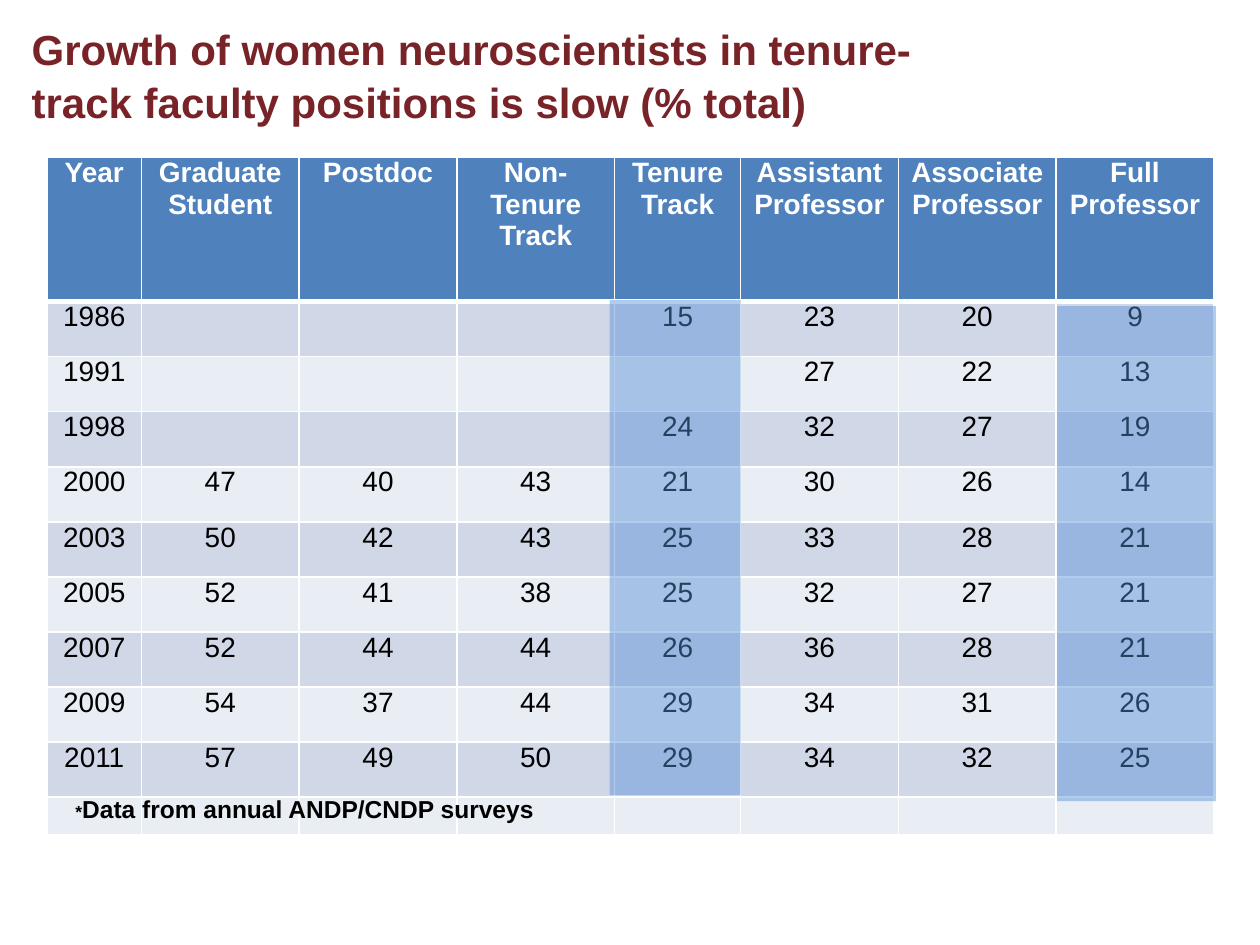
from dataclasses import dataclass

import pptx
import pptx.dml.color
import pptx.enum.shapes
import pptx.enum.text
import pptx.oxml
import pptx.oxml.ns
import pptx.util
from pptx.util import Cm

FONT = "Arial"
HEADERS = ["Year", "Graduate Student", "Postdoc", "Non-\nTenure\nTrack", "Tenure\nTrack",
           "Assistant Professor", "Associate Professor", "Full Professor"]
ROWS = [
    ["1986", "", "", "", "15", "23", "20", "9"],
    ["1991", "", "", "", "", "27", "22", "13"],
    ["1998", "", "", "", "24", "32", "27", "19"],
    ["2000", "47", "40", "43", "21", "30", "26", "14"],
    ["2003", "50", "42", "43", "25", "33", "28", "21"],
    ["2005", "52", "41", "38", "25", "32", "27", "21"],
    ["2007", "52", "44", "44", "26", "36", "28", "21"],
    ["2009", "54", "37", "44", "29", "34", "31", "26"],
    ["2011", "57", "49", "50", "29", "34", "32", "25"],
    [""] * 8,
]
COL_WIDTHS = [1.9, 3.18, 3.18, 3.18, 2.54, 3.18, 3.18, 3.18]
ROW_HEIGHTS = [2.9] + [1.11] * 9 + [0.7]


@dataclass
class Box:
    left: float
    top: float
    width: float
    height: float

    def cm(self) -> list:
        return [Cm(v) for v in (self.left, self.top, self.width, self.height)]


HIGHLIGHTS = [Box(12.29, 6.05, 2.64, 9.98), Box(21.31, 6.17, 3.2, 9.98)]


def rgb(color: str):
    return pptx.dml.color.RGBColor.from_string(color)


def add_text(p, text: str, size: float = 16, color: str = "000000", bold: bool = False) -> None:
    r = p.add_run()
    r.text = text
    r.font.name, r.font.size, r.font.bold = FONT, pptx.util.Pt(size), bold
    r.font.color.rgb = rgb(color)


def add_textbox(s, box: Box):
    tf = s.shapes.add_textbox(*box.cm()).text_frame
    tf.word_wrap = True
    return tf


def set_borders(cell, **widths: float) -> None:
    """Draw white cell borders; widths are points by side (L, R, T, B)."""
    tc_pr = cell._tc.get_or_add_tcPr()
    for i, (side, width) in enumerate(widths.items()):
        ln = pptx.oxml.parse_xml(
            f'<a:ln{side} {pptx.oxml.ns.nsdecls("a")} w="{pptx.util.Pt(width)}">'
            f'<a:solidFill><a:srgbClr val="FFFFFF"/></a:solidFill></a:ln{side}>')
        tc_pr.insert(i, ln)


def fill_cell(cell, text: str, row: int) -> None:
    header = row == 0
    cell.margin_left = cell.margin_right = Cm(0.18)
    cell.margin_top = cell.margin_bottom = 0
    cell.fill.solid()
    cell.fill.fore_color.rgb = rgb("4F81BD" if header else "D0D8E8" if row % 2 else "E9EDF4")
    set_borders(cell, L=1, R=1, T=3 if row == 1 else 1, B=3 if header else 1)
    tf = cell.text_frame
    for i, line in enumerate(text.split("\n") if text else []):
        p = tf.add_paragraph() if i else tf.paragraphs[0]
        p.alignment = pptx.enum.text.PP_ALIGN.CENTER
        add_text(p, line, color="FFFFFF" if header else "000000", bold=header)


def add_faculty_table(s, left: float, top: float) -> None:
    box = Box(left, top, sum(COL_WIDTHS), sum(ROW_HEIGHTS))
    data = [HEADERS] + ROWS
    table = s.shapes.add_table(len(data), len(HEADERS), *box.cm()).table
    for col, width in zip(table.columns, COL_WIDTHS):
        col.width = Cm(width)
    for row, height in zip(table.rows, ROW_HEIGHTS):
        row.height = Cm(height)
    for i, values in enumerate(data):
        for j, text in enumerate(values):
            fill_cell(table.cell(i, j), text, i)


def add_highlight(s, box: Box) -> None:
    sp = s.shapes.add_shape(pptx.enum.shapes.MSO_SHAPE.RECTANGLE, *box.cm())
    sp.shadow.inherit = False
    sp.line.fill.background()
    sp.fill.solid()
    sp.fill.fore_color.rgb = rgb("558ED5")
    clr = sp._element.spPr.find(".//" + pptx.oxml.ns.qn("a:srgbClr"))
    clr.append(pptx.oxml.parse_xml(f'<a:alpha {pptx.oxml.ns.nsdecls("a")} val="45000"/>'))


def main() -> None:
    prs = pptx.Presentation()
    prs.slide_width, prs.slide_height = Cm(25.4), Cm(19.05)
    s = prs.slides.add_slide(prs.slide_layouts[6])

    # Title
    tf = add_textbox(s, Box(0.64, 0.43, 17.78, 2.34))
    tf.margin_left = tf.margin_right = tf.margin_top = tf.margin_bottom = 0
    p = tf.paragraphs[0]
    p.line_spacing = 1.05
    add_text(p, "Growth of women neuroscientists in tenure-track faculty positions is slow (% total)",
             size=24, color="782327", bold=True)

    # Table of percentages by year
    add_faculty_table(s, 0.95, 3.18)

    # Footnote
    tf = add_textbox(s, Box(1.27, 15.88, 24.61, 0.86))
    tf.auto_size = pptx.enum.text.MSO_AUTO_SIZE.SHAPE_TO_FIT_TEXT
    p = tf.paragraphs[0]
    add_text(p, "*", size=10, bold=True)
    add_text(p, "Data from annual ANDP/CNDP surveys", size=14, bold=True)

    # Highlighted columns
    for box in HIGHLIGHTS:
        add_highlight(s, box)

    prs.save("out.pptx")


if __name__ == "__main__":
    main()
